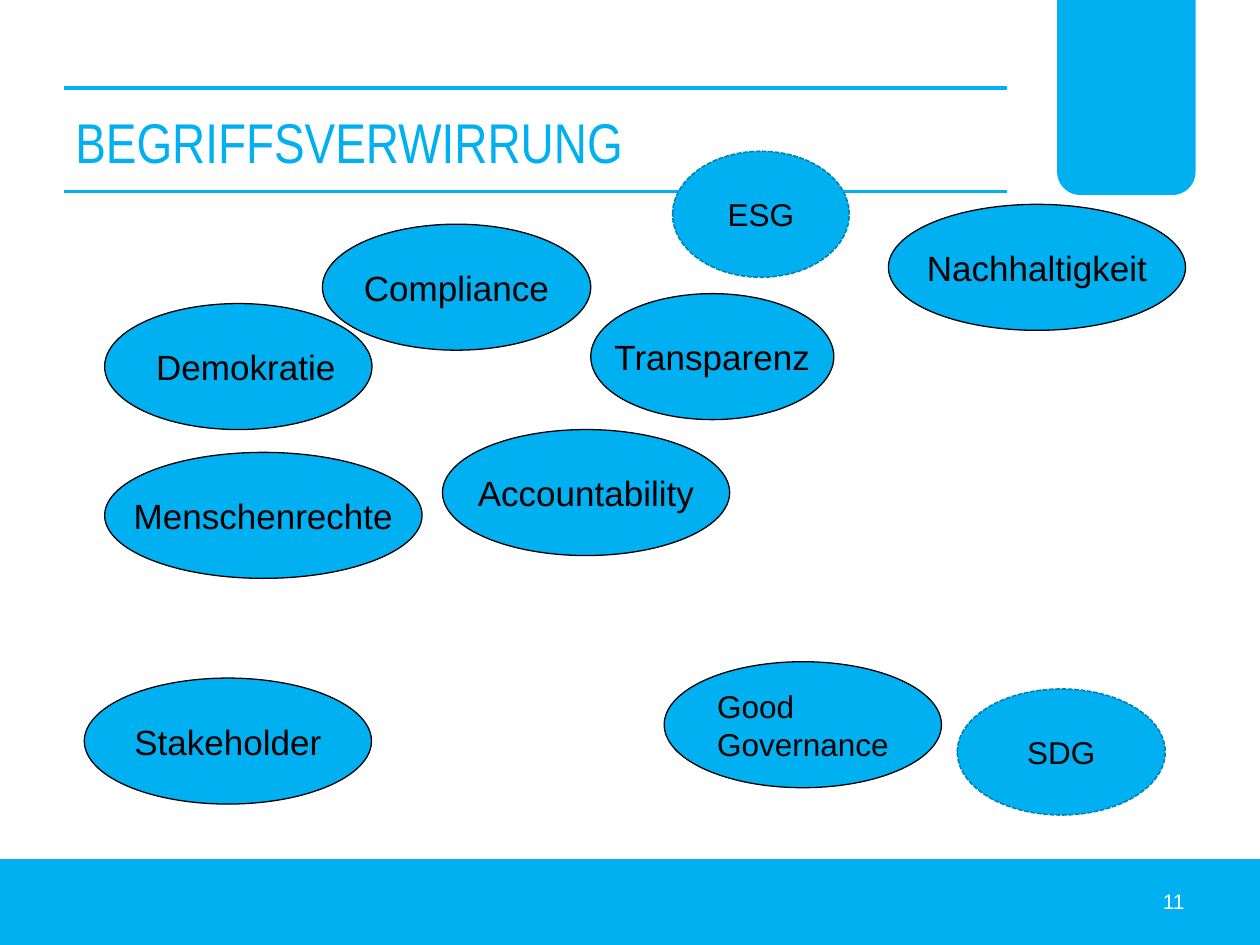
from pptx import Presentation
from pptx.dml.color import RGBColor
from pptx.enum.dml import MSO_LINE
from pptx.enum.shapes import MSO_CONNECTOR, MSO_SHAPE
from pptx.enum.text import MSO_ANCHOR, PP_ALIGN
from pptx.oxml.ns import qn
from pptx.util import Cm, Pt
from lxml import etree

CYAN = RGBColor(0x00, 0xB0, 0xF0)
DARK_CYAN = RGBColor(0x00, 0x82, 0xB2)
BLACK = RGBColor(0x00, 0x00, 0x00)
WHITE = RGBColor(0xFF, 0xFF, 0xFF)

RECTANGLE = MSO_SHAPE.RECTANGLE
ROUNDED_TAB = MSO_SHAPE.ROUND_2_SAME_RECTANGLE
ELLIPSE = MSO_SHAPE.OVAL
STRAIGHT = MSO_CONNECTOR.STRAIGHT
DASHED = MSO_LINE.SQUARE_DOT
MIDDLE = MSO_ANCHOR.MIDDLE
LEFT, CENTER, RIGHT = PP_ALIGN.LEFT, PP_ALIGN.CENTER, PP_ALIGN.RIGHT

PAGE_WIDTH, PAGE_HEIGHT = 25.4, 19.05
FOOTER_TOP = 17.32
ELLIPSE_HEIGHT = 2.54

TERMS = [
    ("Nachhaltigkeit", 17.91, 4.12, 5.99, 20, CENTER),
    ("Menschenrechte", 2.11, 9.12, 6.4, 20, CENTER),
    ("Good\nGovernance", 13.39, 13.34, 5.59, 18, LEFT),
    ("Transparenz", 11.91, 5.92, 4.9, 20, CENTER),
    ("Compliance", 6.5, 4.52, 5.41, 20, CENTER),
    ("Accountability", 8.92, 8.66, 5.79, 20, CENTER),
    ("Stakeholder", 1.7, 13.67, 5.79, 20, CENTER),
    ("Demokratie", 2.11, 6.12, 5.39, 20, LEFT),
]
ABBREVIATIONS = [
    ("SDG", 19.3, 13.89, 4.19),
    ("ESG", 13.56, 3.05, 3.56),
]


def write_text(box, text, size, color, align, font="Arial", wrap=True):
    frame = box.text_frame
    frame.word_wrap = wrap
    frame.vertical_anchor = MIDDLE
    frame.text = text
    values = {"name": font, "size": Pt(size)}
    for para in frame.paragraphs:
        para.alignment = align
        for span in para.runs:
            for name, value in values.items():
                setattr(span.font, name, value)
            span.font.color.rgb = color


def add_filled_shape(page, kind, left, top, width, height):
    shape = page.shapes.add_shape(kind, Cm(left), Cm(top), Cm(width), Cm(height))
    shape.shadow.inherit = False
    shape.fill.solid()
    shape.fill.fore_color.rgb = CYAN
    shape.line.fill.background()
    return shape


def add_rule(page, top):
    rule = page.shapes.add_connector(STRAIGHT, Cm(1.3), Cm(top), Cm(20.3), Cm(top))
    rule.line.color.rgb = CYAN
    rule.line.width = Pt(2.25)
    etree.SubElement(rule._element.spPr, qn("a:effectLst"))


def add_text_box(page, left, top, width, height, text, **text_format):
    box = page.shapes.add_textbox(Cm(left), Cm(top), Cm(width), Cm(height))
    write_text(box, text, **text_format)


def add_ellipse(page, left, top, width, line_format, text, **text_format):
    ellipse = add_filled_shape(page, ELLIPSE, left, top, width, ELLIPSE_HEIGHT)
    ellipse.line.color.rgb = line_format["color"]
    ellipse.line.width = Pt(line_format["width"])
    ellipse.line.dash_style = line_format.get("dash")
    write_text(ellipse, text, color=BLACK, **text_format)


def main():
    deck = Presentation()
    deck.slide_width, deck.slide_height = Cm(PAGE_WIDTH), Cm(PAGE_HEIGHT)
    page = deck.slides.add_slide(deck.slide_layouts[6])

    add_filled_shape(page, RECTANGLE, 0, FOOTER_TOP, PAGE_WIDTH, PAGE_HEIGHT - FOOTER_TOP)
    corner_tab = add_filled_shape(page, ROUNDED_TAB, 21.31, 0, 2.79, 3.93)
    corner_tab.rotation = 180
    for top in (1.78, 3.86):
        add_rule(page, top)
    add_text_box(page, 1.27, 1.73, 20.04, 2.21, "BEGRIFFSVERWIRRUNG",
                 size=32, color=CYAN, align=LEFT, font="Arial Narrow", wrap=False)

    solid_line = {"color": BLACK, "width": 0.75}
    for text, left, top, width, size, align in TERMS:
        add_ellipse(page, left, top, width, solid_line, text,
                    size=size, align=align, wrap=False)

    add_text_box(page, 18.21, 17.65, 5.92, 1.02, "11", size=12, color=WHITE, align=RIGHT)

    dashed_line = {"color": DARK_CYAN, "width": 0.9, "dash": DASHED}
    for text, left, top, width in ABBREVIATIONS:
        add_ellipse(page, left, top, width, dashed_line, text, size=18, align=CENTER)

    deck.save("out.pptx")


if __name__ == "__main__":
    main()
